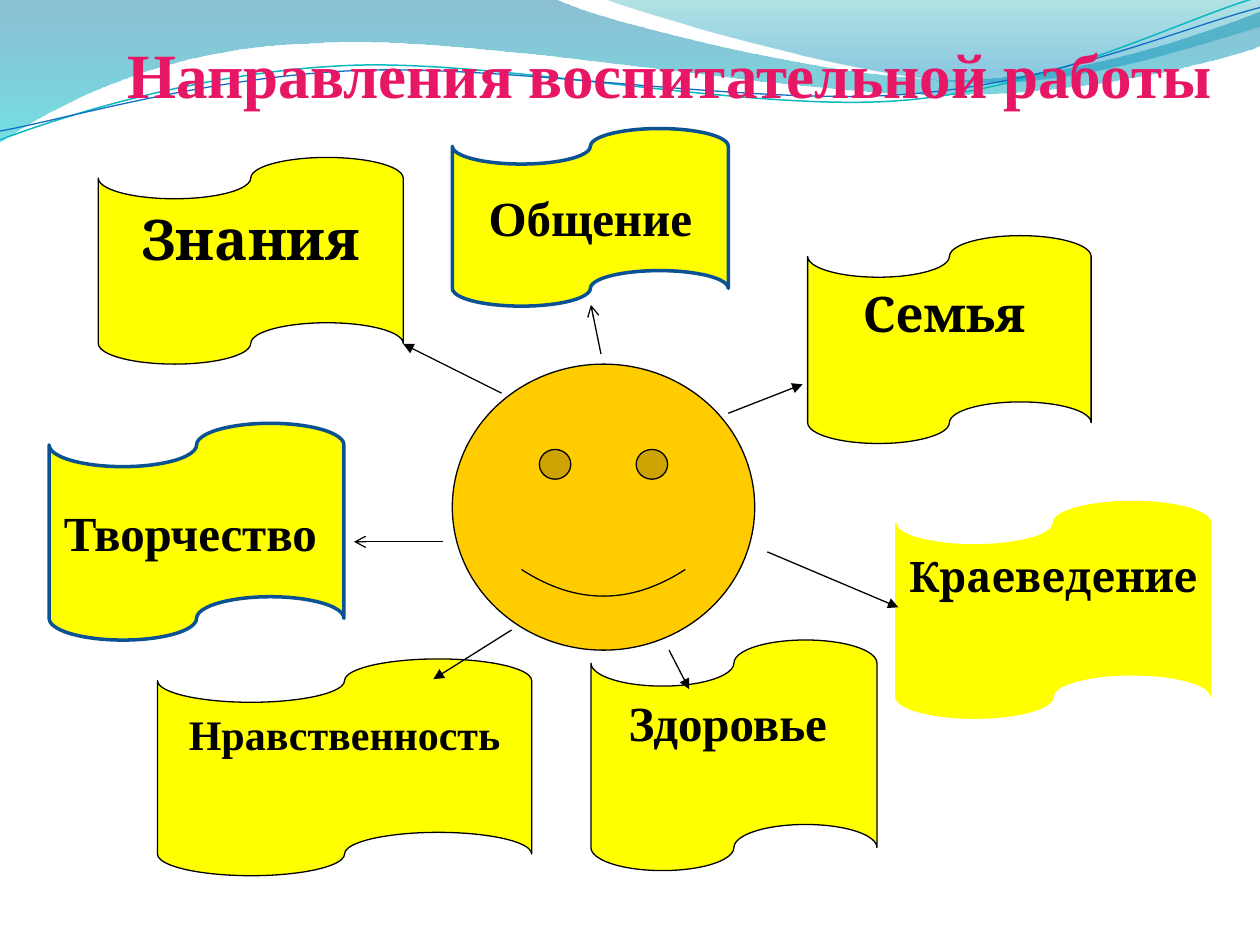
import pptx
import pptx.util
import pptx.dml.color
import pptx.enum.shapes
import pptx.enum.text
import pptx.oxml
import pptx.oxml.ns

WIDTH, HEIGHT = 10, 7.5
TITLE = "Направления воспитательной работы"
BLACK, YELLOW, NAVY = "000000", "FFFF00", "0B5292"
SERIF, CAMBRIA = "Times New Roman", "Cambria"

BANDS = [
    ([(0, 0), (4.4, -0.01),
      (4.76, 0.17, 6.64, 0.63, 7.58, 0.63), (8.53, 0.63, 9.58, 0.26, 10, 0.09),
      (10.01, 0.36),
      (9.83, 0.44, 8.7, 0.76, 7.46, 0.75), (6.22, 0.75, 3.82, 0.28, 2.57, 0.34),
      (1.29, 0.36, 0.46, 0.83, -0.01, 1.13), (0, 0)],
     [(0, "0074A1", 45), (1, "00C6CF", 55)]),
    ([(4.79, -0.01),
      (5.09, 0.11, 6.82, 0.62, 7.69, 0.65), (8.56, 0.69, 9.61, 0.32, 10, 0.21),
      (10, 0), (4.79, -0.01)],
     [(0, "00A1A9", 30), (0.8, "008BBF", 45)]),
]
WAVES = [
    ([(0, 1.11), (0.48, 0.93, 1.58, 0.57, 2.77, 0.52),
      (3.95, 0.47, 5.93, 0.89, 7.13, 0.8), (8.33, 0.71, 9.38, 0.15, 9.98, -0.02)],
     "0AB8BF", 0.85),
    ([(0, 1.04), (0.47, 0.96, 1.64, 0.61, 2.83, 0.56),
      (4.03, 0.51, 5.97, 0.84, 7.17, 0.75), (8.36, 0.67, 9.41, 0.21, 10, 0.06)],
     "0F6FC6", 0.75),
]
TAPES = [
    ("Знания", (0.78, 1.25, 2.42, 1.64), 32, CAMBRIA, BLACK, 0.75, "TOP"),
    ("Нравственность", (1.25, 5.23, 2.97, 1.72), 24, SERIF, BLACK, 0.75, "TOP"),
    ("Семья ", (6.41, 1.87, 2.25, 1.65), 28, CAMBRIA, BLACK, 0.75, "TOP"),
    ("Здоровье ", (4.69, 5.08, 2.27, 1.83), 28, SERIF, BLACK, 0.75, "TOP"),
    ("Краеведение", (7.11, 3.98, 2.5, 1.72), 24, CAMBRIA, YELLOW, 0.75, "TOP"),
    ("Общение", (3.59, 1.02, 2.19, 1.41), 28, SERIF, NAVY, 2, "MIDDLE"),
    ("Творчество ", (0.39, 3.36, 2.34, 1.72), 28, SERIF, NAVY, 2, "MIDDLE"),
]
FACE = (3.59, 2.89, 2.4, 2.27)
ARROWS = [
    ((5.78, 3.28), (6.37, 3.05), "triangle"),
    ((5.31, 5.16), (5.47, 5.47), "triangle"),
    ((6.09, 4.38), (7.13, 4.82), "triangle"),
    ((4.06, 5), (3.44, 5.39), "triangle"),
    ((3.98, 3.12), (3.2, 2.73), "triangle"),
    ((4.77, 2.81), (4.69, 2.42), "arrow"),
    ((3.52, 4.3), (2.81, 4.3), "arrow"),
]

SHAPES = pptx.enum.shapes.MSO_SHAPE
ANCHORS = pptx.enum.text.MSO_ANCHOR


def rgb(value):
    return pptx.dml.color.RGBColor.from_string(value)


def inches(values):
    return [pptx.util.Inches(v) for v in values]


def new_element(tag, **attributes):
    element = pptx.oxml.parse_xml(f"<a:{tag} {pptx.oxml.ns.nsdecls('a')}/>")
    for name, value in attributes.items():
        element.set(name, value)
    return element


def set_line(sp, color, width):
    sp.line.color.rgb = rgb(color)
    sp.line.width = pptx.util.Pt(width)


def write(sp, text, size, font, color=BLACK, anchor="TOP"):
    tf = sp.text_frame
    tf.word_wrap = True
    tf.vertical_anchor = ANCHORS[anchor]
    p = tf.paragraphs[0]
    p.alignment = pptx.enum.text.PP_ALIGN.CENTER
    r = p.add_run()
    r.text = text
    r.font.size, r.font.name, r.font.bold = pptx.util.Pt(size), font, True
    r.font.color.rgb = rgb(color)


def add_curve(s, parts, close):
    points = [inches(part[i:i + 2]) for part in parts for i in range(0, len(part), 2)]
    builder = s.shapes.build_freeform(*points[0])
    builder.add_line_segments(points[1:], close=close)
    sp = builder.convert_to_shape()
    sp.shadow.inherit = False
    segments = iter(sp._element.findall(".//" + pptx.oxml.ns.qn("a:lnTo")))
    for part in parts[1:]:
        group = [next(segments) for _ in range(len(part) // 2)]
        if len(group) == 3:
            bezier = new_element("cubicBezTo")
            group[0].addprevious(bezier)
            for segment in group:
                bezier.append(segment[0])
                segment.getparent().remove(segment)
    return sp


def add_band(s, parts, stops):
    sp = add_curve(s, parts, True)
    sp.line.fill.background()
    sp.fill.gradient()
    sp.fill.gradient_angle = 270
    for stop, (position, color, opacity) in zip(sp.fill.gradient_stops, stops):
        stop.position = position
        stop.color.rgb = rgb(color)
    colors = sp._element.spPr.findall(".//" + pptx.oxml.ns.qn("a:srgbClr"))
    for node, (position, color, opacity) in zip(colors, stops):
        node.append(new_element("alpha", val=str(opacity * 1000)))


def add_wave(s, parts, color, width):
    sp = add_curve(s, parts, False)
    sp.fill.background()
    set_line(sp, color, width)


def add_figure(s, kind, box, fill, line, width):
    sp = s.shapes.add_shape(kind, *inches(box))
    sp.shadow.inherit = False
    sp.fill.solid()
    sp.fill.fore_color.rgb = rgb(fill)
    set_line(sp, line, width)
    return sp


def add_arrow(s, start, end, head):
    sp = s.shapes.add_connector(pptx.enum.shapes.MSO_CONNECTOR.STRAIGHT, *inches(start + end))
    set_line(sp, BLACK, 0.75)
    sp.line._get_or_add_ln().append(new_element("tailEnd", type=head))
    sp._element.spPr.append(new_element("effectLst"))


def main():
    prs = pptx.Presentation()
    prs.slide_width, prs.slide_height = inches((WIDTH, HEIGHT))
    s = prs.slides.add_slide(prs.slide_layouts[5])
    for band in BANDS:
        add_band(s, *band)
    for wave in WAVES:
        add_wave(s, *wave)
    add_figure(s, SHAPES.SMILEY_FACE, FACE, "FFCC00", BLACK, 0.75)
    for text, box, size, font, line, width, anchor in TAPES:
        sp = add_figure(s, SHAPES.FLOWCHART_PUNCHED_TAPE, box, YELLOW, line, width)
        write(sp, text, size, font, anchor=anchor)
    for arrow in ARROWS:
        add_arrow(s, *arrow)
    title = s.shapes.title
    title.left, title.top, title.width, title.height = inches((0.86, 0.23, 8.91, 0.71))
    write(title, TITLE, 36, SERIF, color="E81766")
    title.text_frame.auto_size = pptx.enum.text.MSO_AUTO_SIZE.SHAPE_TO_FIT_TEXT
    title._element.getparent().append(title._element)
    prs.save("out.pptx")


if __name__ == "__main__":
    main()
